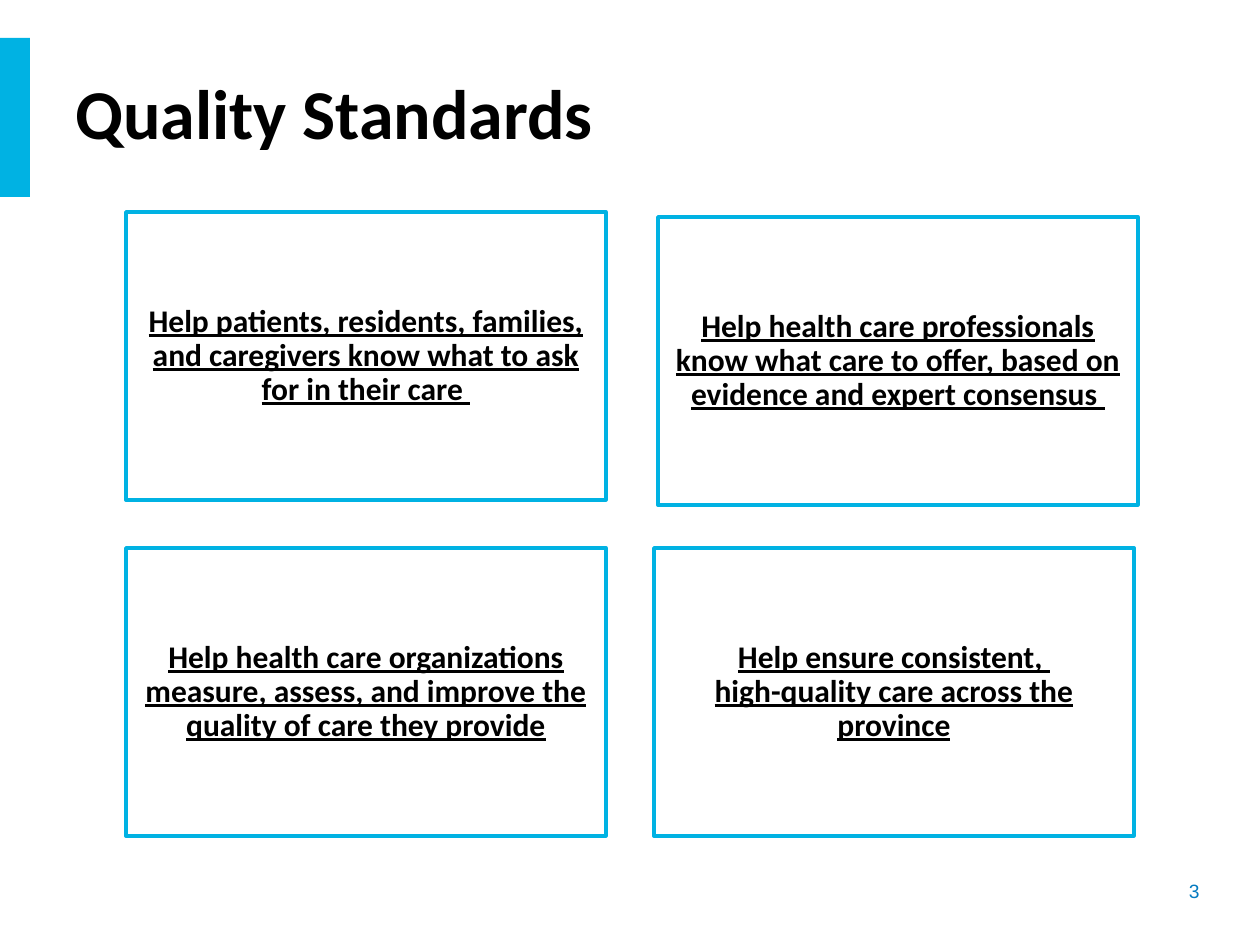
from pptx import Presentation, util as u
from pptx.dml import color
from pptx.enum import shapes, text

SCALE = 914400 // 126
ALIGN = text.PP_ALIGN
MID = text.MSO_ANCHOR.MIDDLE


def px(n):
    """Turn px into EMU."""
    return u.Emu(n * SCALE)


def rgb(code):
    """Turn a hex string into a colour."""
    return color.RGBColor.from_string(code)


def assign(item, values):
    """Set attributes from a dict."""
    for name, value in values.items():
        setattr(item, name, value)


class Deck:
    """Hold the style and the current slide."""

    blue = "00B2E3"
    title = {"name": "Calibri", "size": u.Pt(40), "bold": True}
    body = {"name": "Calibri", "size": u.Pt(18), "bold": True, "underline": True}
    small = {"name": "Arial", "size": u.Pt(11)}

    def __init__(self):
        """Start a deck with one blank slide."""
        self.prs = Presentation()
        assign(self.prs, {"slide_width": px(1260), "slide_height": px(945)})
        self.slide = self.prs.slides.add_slide(self.prs.slide_layouts[6])

    def rect(self, *box):
        """Add a plain rectangle."""
        shape = self.slide.shapes.add_shape(
            shapes.MSO_SHAPE.RECTANGLE, *map(px, box))
        shape.shadow.inherit = False
        return shape

    def letter(self, shape, words, font, tint="000000", frame=None, para=None):
        """Fill a shape with one styled paragraph."""
        assign(shape.text_frame, {"word_wrap": True, **(frame or {})})
        line = shape.text_frame.paragraphs[0]
        line.text = words
        assign(line, para or {})
        for run in line.runs:
            assign(run.font, font)
            run.font.color.rgb = rgb(tint)

    def bar(self, *box):
        """Add a solid accent bar."""
        shape = self.rect(*box)
        shape.fill.solid()
        shape.fill.fore_color.rgb = rgb(self.blue)
        shape.line.fill.background()

    def label(self, box, *args, **opts):
        """Add a text box."""
        shape = self.slide.shapes.add_textbox(*map(px, box))
        self.letter(shape, *args, **opts)

    def card(self, box, words):
        """Add an outlined card with centred text."""
        shape = self.rect(*box)
        shape.fill.background()
        shape.line.color.rgb = rgb(self.blue)
        shape.line.width = u.Pt(2)
        sides = ("left", "right", "top", "bottom")
        frame = {f"margin_{side}": px(9) for side in sides}
        self.letter(shape, words, self.body,
                    frame={"vertical_anchor": MID, **frame},
                    para={"alignment": ALIGN.CENTER, "line_spacing": 0.9})


def main():
    """Build the slide."""
    deck = Deck()
    deck.label((1065, 873, 147, 37), "3", deck.small, "047BC1",
               para={"alignment": ALIGN.RIGHT})
    deck.bar(0, 38, 30, 159)
    deck.label((63, 63, 984, 97), "Quality Standards", deck.title,
               frame={"vertical_anchor": MID})
    cards = [
        (126, 212, "Help patients, residents, families, and caregivers "
                   "know what to ask for in their care "),
        (658, 217, "Help health care professionals know what care to offer, "
                   "based on evidence and expert consensus "),
        (126, 548, "Help health care organizations measure, assess, and "
                   "improve the quality of care they provide"),
        (654, 548, "Help ensure consistent, \n"
                   "high-quality care across the province"),
    ]
    for left, top, words in cards:
        deck.card((left, top, 480, 288), words)
    deck.prs.save("out.pptx")


if __name__ == "__main__":
    main()
